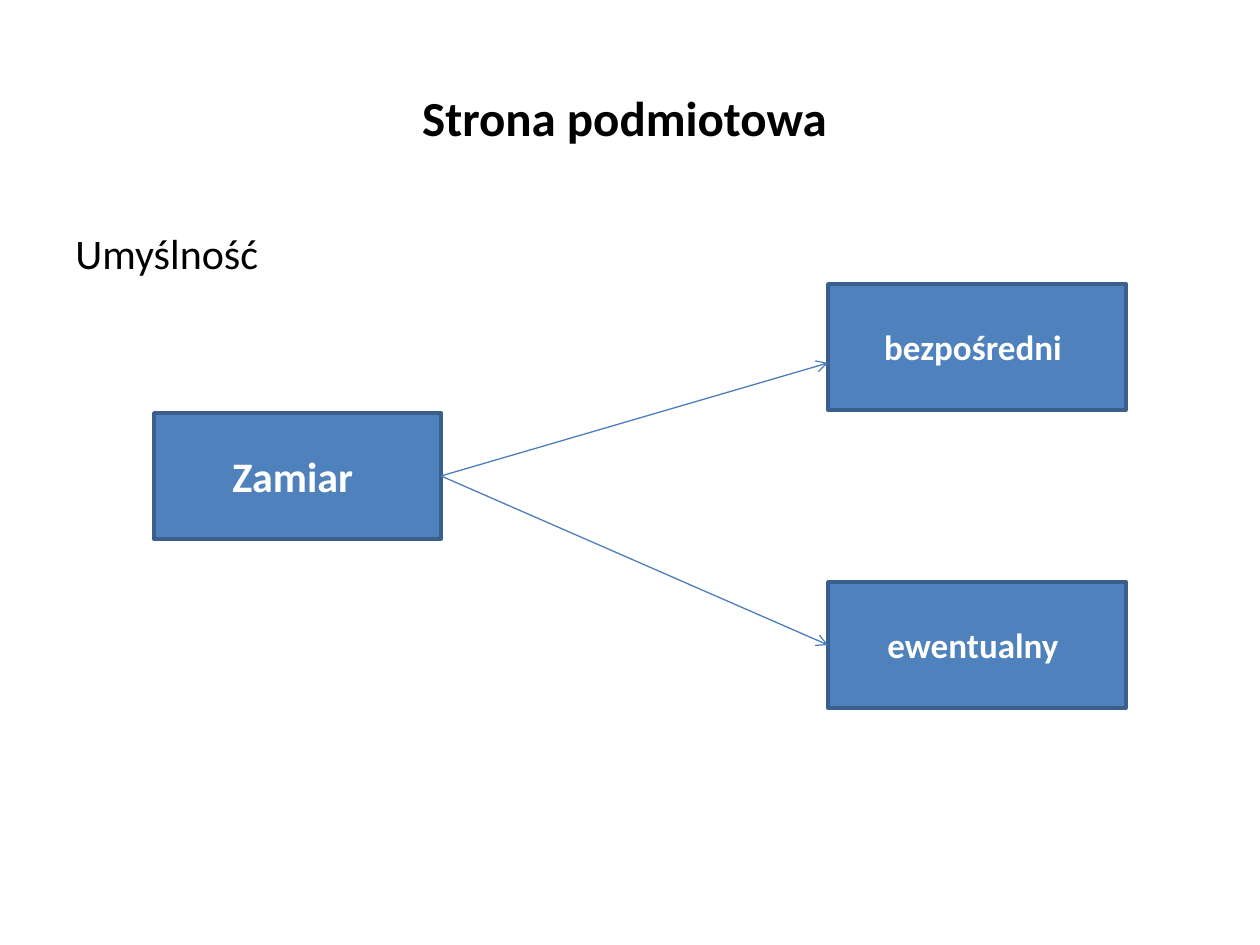
import pptx
import pptx.dml.color
import pptx.enum.shapes
import pptx.enum.text
import pptx.oxml
import pptx.oxml.ns
import pptx.util
from dataclasses import dataclass

ALIGN = pptx.enum.text.PP_ALIGN
ANCHOR = pptx.enum.text.MSO_ANCHOR
RIGHT_SIDE, LEFT_SIDE = 3, 1


@dataclass(frozen=True)
class Theme:
    font: str = "Calibri"
    ink: str = "000000"
    box_text: str = "FFFFFF"
    box_fill: str = "4F81BD"
    box_line: str = "3A5F8C"
    arrow: str = "4B7EBC"
    title_size: int = 28
    main_size: int = 24
    kind_size: int = 20
    box_line_width: float = 2
    arrow_width: float = 0.75


def px(length):
    return pptx.util.Emu(round(length * 914400 / 126))


def rgb(code):
    return pptx.dml.color.RGBColor.from_string(code)


def write(frame, text, *, font, size, color, bold=False,
          align=ALIGN.LEFT, anchor=ANCHOR.TOP):
    frame.word_wrap = True
    frame.vertical_anchor = anchor
    paragraph = frame.paragraphs[0]
    paragraph.alignment = align
    run = paragraph.add_run()
    run.text = text
    run.font.name = font
    run.font.size = pptx.util.Pt(size)
    run.font.bold = bold
    run.font.color.rgb = rgb(color)


class SlideBuilder:
    def __init__(self, slide, theme):
        self.slide = slide
        self.theme = theme

    def text(self, text, left, top, width, height, size, **style):
        area = self.slide.shapes.add_textbox(px(left), px(top), px(width), px(height))
        write(area.text_frame, text, font=self.theme.font, size=size,
              color=self.theme.ink, **style)

    def box(self, text, left, top, width, height, size):
        box = self.slide.shapes.add_shape(
            pptx.enum.shapes.MSO_SHAPE.RECTANGLE,
            px(left), px(top), px(width), px(height))
        box.shadow.inherit = False
        box.fill.solid()
        box.fill.fore_color.rgb = rgb(self.theme.box_fill)
        box.line.color.rgb = rgb(self.theme.box_line)
        box.line.width = pptx.util.Pt(self.theme.box_line_width)
        write(box.text_frame, text, font=self.theme.font, size=size,
              color=self.theme.box_text, bold=True,
              align=ALIGN.CENTER, anchor=ANCHOR.MIDDLE)
        return box

    def arrow(self, source, end_x, end_y, target=None):
        arrow = self.slide.shapes.add_connector(
            pptx.enum.shapes.MSO_CONNECTOR.STRAIGHT,
            source.left + source.width, source.top + source.height // 2,
            px(end_x), px(end_y))
        arrow.begin_connect(source, RIGHT_SIDE)
        if target is not None:
            arrow.end_connect(target, LEFT_SIDE)
        arrow.line.color.rgb = rgb(self.theme.arrow)
        arrow.line.width = pptx.util.Pt(self.theme.arrow_width)
        # Open arrowhead, no shadow
        qn = pptx.oxml.ns.qn
        head = arrow.line._get_or_add_ln().makeelement(qn("a:tailEnd"), {"type": "arrow"})
        arrow.line._get_or_add_ln().append(head)
        properties = arrow._element.spPr
        properties.append(properties.makeelement(qn("a:effectLst"), {}))


def main():
    theme = Theme()
    deck = pptx.Presentation()
    deck.slide_width, deck.slide_height = px(1260), px(945)
    build = SlideBuilder(deck.slides.add_slide(deck.slide_layouts[6]), theme)

    # Title and topic
    build.text("Strona podmiotowa ", 63, 38, 1134, 158, theme.title_size,
               bold=True, align=ALIGN.CENTER, anchor=ANCHOR.MIDDLE)
    build.text("Umyślność", 63, 221, 1134, 624, theme.main_size)

    # Intent and its two kinds
    kinds_left = 828
    intent = build.box("Zamiar ", 154, 413, 287, 126, theme.main_size)
    direct, eventual = [
        build.box(kind, kinds_left, top, 298, 126, theme.kind_size)
        for kind, top in (("bezpośredni ", 284), ("ewentualny ", 582))]

    # Arrows; the upper one ends below the middle of its box
    build.arrow(intent, kinds_left, 363)
    build.arrow(intent, kinds_left, 645, target=eventual)

    deck.save("out.pptx")


if __name__ == "__main__":
    main()
